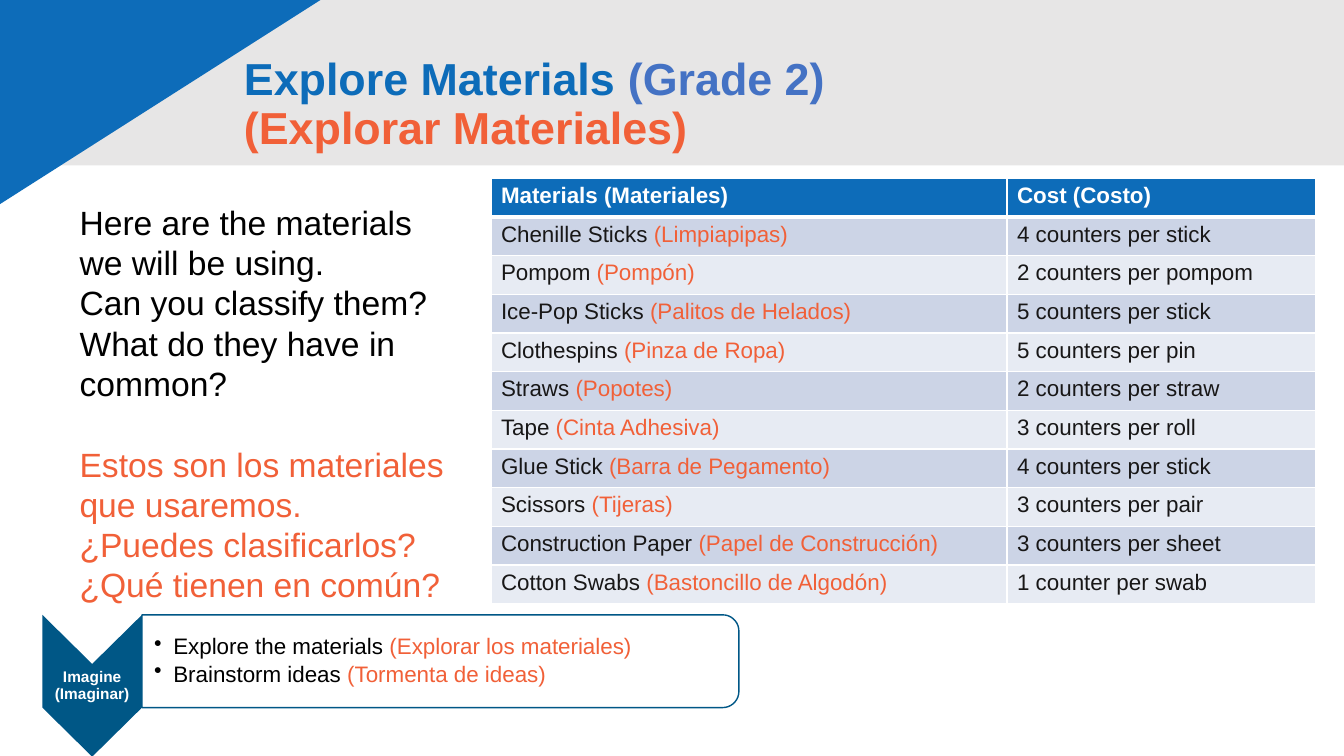
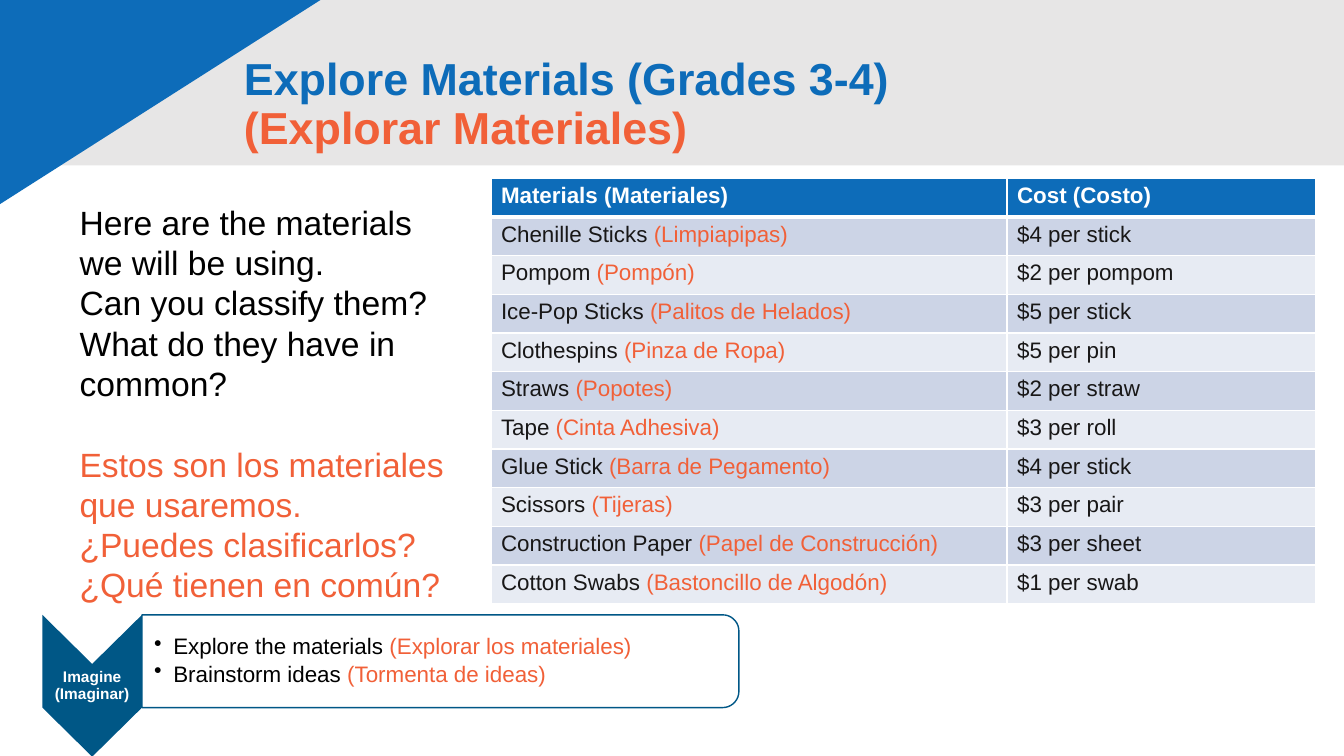
import math
from dataclasses import dataclass

from lxml import etree
from pptx import Presentation
from pptx import util as u
from pptx.dml.color import RGBColor
from pptx.enum import shapes, text
from pptx.oxml.ns import qn

COLORS = {
    "blue": "0D6CB9", "indigo": "4472C4", "orange": "F16038", "navy": "005786",
    "band": "E7E6E6", "white": "FFFFFF", "black": "000000", "ink": "181717",
    "row_dark": "CCD4E6", "row_light": "E7EBF3",
}
FONT = "Arial"
WIDTH, HEIGHT = u.Inches(13.33), u.Inches(7.5)


@dataclass(frozen=True)
class Box:
    """Place and size in percent of the slide's width and height."""
    left: float
    top: float
    width: float
    height: float

    def emu(self) -> tuple[int, int, int, int]:
        return x(self.left), y(self.top), x(self.width), y(self.height)


@dataclass(frozen=True)
class Span:
    text: str
    color: str = "black"


@dataclass(frozen=True)
class Material:
    name: str
    spanish: str
    price: int
    unit: str


@dataclass(frozen=True)
class GradeSlide:
    title: tuple[Span, ...]
    price_one: str
    price_many: str


# Shared layout, in percent of the slide
BAND = Box(0, 0, 100, 21.9)
CORNER = [(0, 0), (23.85, 0), (0, 27)]
TITLE = Box(17.4, 4.27, 72.75, 19.33)
INTRO = Box(5.18, 26, 30.08, 59.2)
TABLE = Box(36.53, 23.6, 61.35, 56.27)
COLUMNS = (38.4, 22.95)
STEP = Box(3.15, 81.33, 7.42, 12.27)
NOTCH = 6.5
PANEL = Box(10.57, 81.33, 44.41, 12.27)
RADIUS = u.Inches(0.16)

# Content
MATERIALS = [
    Material("Chenille Sticks", "Limpiapipas", 4, "stick"),
    Material("Pompom", "Pompón", 2, "pompom"),
    Material("Ice-Pop Sticks", "Palitos de Helados", 5, "stick"),
    Material("Clothespins", "Pinza de Ropa", 5, "pin"),
    Material("Straws", "Popotes", 2, "straw"),
    Material("Tape", "Cinta Adhesiva", 3, "roll"),
    Material("Glue Stick", "Barra de Pegamento", 4, "stick"),
    Material("Scissors", "Tijeras", 3, "pair"),
    Material("Construction Paper", "Papel de Construcción", 3, "sheet"),
    Material("Cotton Swabs", "Bastoncillo de Algodón", 1, "swab"),
]
ENGLISH = ["Here are the materials we will be using.", "Can you classify them?",
           "What do they have in common?"]
SPANISH = ["Estos son los materiales que usaremos.", "¿Puedes clasificarlos?",
           "¿Qué tienen en común?"]
TASKS = [("Explore the materials ", "(Explorar los materiales)"),
         ("Brainstorm ideas ", "(Tormenta de ideas)")]
SUBTITLE = Span("(Explorar Materiales)", "orange")
SLIDES = [
    GradeSlide((Span("Explore Materials ", "blue"), Span("(Grade 2)", "indigo")),
               "{} counter", "{} counters"),
    GradeSlide((Span("Explore Materials (Grades 3-4)", "blue"),), "${}", "${}"),
]


# Helpers
def x(percent: float) -> int:
    return round(WIDTH * percent / 100)


def y(percent: float) -> int:
    return round(HEIGHT * percent / 100)


def rgb(name: str) -> RGBColor:
    return RGBColor.from_string(COLORS[name])


def set_attrs(target, **values) -> None:
    for key, value in values.items():
        setattr(target, key, value)


def add_spans(p, spans, size: float, bold: bool = False) -> None:
    for span in spans:
        r = p.add_run()
        r.text = span.text
        set_attrs(r.font, name=FONT, size=u.Pt(size), bold=bold)
        r.font.color.rgb = rgb(span.color)


def paint(sp, fill: str, line: str = "") -> None:
    sp.shadow.inherit = False
    sp.fill.solid()
    sp.fill.fore_color.rgb = rgb(fill)
    if line:
        sp.line.color.rgb = rgb(line)
        sp.line.width = u.Pt(1)
    else:
        sp.line.fill.background()


def add_outline(s, points: list[tuple[int, int]]):
    builder = s.shapes.build_freeform(*points[0])
    builder.add_line_segments(points[1:], close=True)
    return builder.convert_to_shape()


def set_margins(tf, left: float, top: float, right: float, bottom: float) -> None:
    set_attrs(tf, margin_left=u.Inches(left), margin_top=u.Inches(top),
              margin_right=u.Inches(right), margin_bottom=u.Inches(bottom))


# Slide parts
def add_backdrop(s) -> None:
    paint(s.shapes.add_shape(shapes.MSO_SHAPE.RECTANGLE, *BAND.emu()), "band")
    paint(add_outline(s, [(x(a), y(b)) for a, b in CORNER]), "blue")


def add_title(s, spans: tuple[Span, ...]) -> None:
    title = s.shapes.title
    left, top, width, height = TITLE.emu()
    set_attrs(title, left=left, top=top, width=width, height=height)
    tf = title.text_frame
    set_attrs(tf, word_wrap=True, auto_size=text.MSO_AUTO_SIZE.NONE,
              vertical_anchor=text.MSO_ANCHOR.MIDDLE)
    p = tf.paragraphs[0]
    set_attrs(p, alignment=text.PP_ALIGN.LEFT, line_spacing=0.9)
    add_spans(p, spans, 32, True)
    p.add_line_break()
    for br in p._p.findall(qn("a:br")):
        etree.SubElement(br, qn("a:rPr"), sz="3200")
    add_spans(p, [SUBTITLE], 32, True)
    # Bring the title in front of the backdrop
    title.element.getparent().append(title.element)


def add_intro(s) -> None:
    tf = s.shapes.add_textbox(*INTRO.emu()).text_frame
    tf.word_wrap = True
    lines = [Span(t) for t in ENGLISH] + [Span(t, "orange") for t in SPANISH]
    for i, line in enumerate(lines):
        p = tf.add_paragraph() if i else tf.paragraphs[0]
        if i == len(ENGLISH):
            p.space_before = u.Pt(28.8)
        add_spans(p, [line], 24)


def add_step(s) -> None:
    left, top, width, height = STEP.emu()
    right, middle, bottom, notch = left + width, left + width // 2, top + height, y(NOTCH)
    sp = add_outline(s, [(left, top), (middle, top + notch), (right, top),
                         (right, bottom), (middle, bottom + notch), (left, bottom)])
    paint(sp, "navy")
    tf = sp.text_frame
    set_attrs(tf, word_wrap=True, vertical_anchor=text.MSO_ANCHOR.MIDDLE)
    set_margins(tf, 0.01, 0.47, 0.01, 0.47)
    p = tf.paragraphs[0]
    set_attrs(p, alignment=text.PP_ALIGN.CENTER, line_spacing=0.9)
    add_spans(p, [Span("Imagine (Imaginar)", "white")], 11, True)


def add_tasks(s) -> None:
    left, top, width, height = PANEL.emu()
    right, bottom = left + width, top + height
    # Rounded corners on the right side only
    points = [(left, top)]
    for center_y, start in ((top + RADIUS, -90), (bottom - RADIUS, 0)):
        for step in range(0, 91, 10):
            angle = math.radians(start + step)
            points.append((round(right - RADIUS + RADIUS * math.cos(angle)),
                           round(center_y + RADIUS * math.sin(angle))))
    sp = add_outline(s, points + [(left, bottom)])
    paint(sp, "white", "navy")
    color = sp.element.spPr.find(qn("a:solidFill"))[0]
    etree.SubElement(color, qn("a:alpha"), val="90000")
    tf = sp.text_frame
    set_attrs(tf, word_wrap=True, vertical_anchor=text.MSO_ANCHOR.MIDDLE)
    set_margins(tf, 0.12, 0.05, 0.05, 0.05)
    for i, (english, spanish) in enumerate(TASKS):
        p = tf.add_paragraph() if i else tf.paragraphs[0]
        pPr = p._p.get_or_add_pPr()
        pPr.set("marL", str(u.Inches(0.19)))
        pPr.set("indent", str(-u.Inches(0.19)))
        etree.SubElement(pPr, qn("a:buChar"), char="•")
        set_attrs(p, alignment=text.PP_ALIGN.LEFT, line_spacing=0.9,
                  space_after=u.Pt(2.4))
        add_spans(p, [Span(english), Span(spanish, "orange")], 16)


def add_borders(cell, widths: dict[str, float]) -> None:
    tcPr = cell._tc.get_or_add_tcPr()
    for side, width in widths.items():
        ln = etree.SubElement(tcPr, qn(f"a:ln{side}"), w=str(u.Pt(width)))
        fill = etree.SubElement(ln, qn("a:solidFill"))
        etree.SubElement(fill, qn("a:srgbClr"), val=COLORS["white"])


def add_price_table(s, spec: GradeSlide) -> None:
    rows = [([Span("Materials (Materiales)", "white")], [Span("Cost (Costo)", "white")])]
    for m in MATERIALS:
        price = spec.price_one if m.price == 1 else spec.price_many
        rows.append(([Span(f"{m.name} ", "ink"), Span(f"({m.spanish})", "orange")],
                     [Span(f"{price.format(m.price)} per {m.unit}", "ink")]))
    table = s.shapes.add_table(len(rows), len(COLUMNS), *TABLE.emu()).table
    for column, width in zip(table.columns, COLUMNS):
        column.width = x(width)
    for i, row in enumerate(rows):
        table.rows[i].height = y(TABLE.height / len(rows))
        fill = "blue" if i == 0 else ("row_light", "row_dark")[i % 2]
        for j, spans in enumerate(row):
            cell = table.cell(i, j)
            add_borders(cell, {"L": 1, "R": 1, "T": 3 if i == 1 else 1,
                               "B": 3 if i == 0 else 1})
            cell.fill.solid()
            cell.fill.fore_color.rgb = rgb(fill)
            add_spans(cell.text_frame.paragraphs[0], spans, 16, i == 0)


def main() -> None:
    prs = Presentation()
    set_attrs(prs, slide_width=WIDTH, slide_height=HEIGHT)
    for spec in SLIDES:
        s = prs.slides.add_slide(prs.slide_layouts[5])
        add_backdrop(s)
        add_step(s)
        add_tasks(s)
        add_intro(s)
        add_title(s, spec.title)
        add_price_table(s, spec)
    prs.save("out.pptx")


if __name__ == "__main__":
    main()
